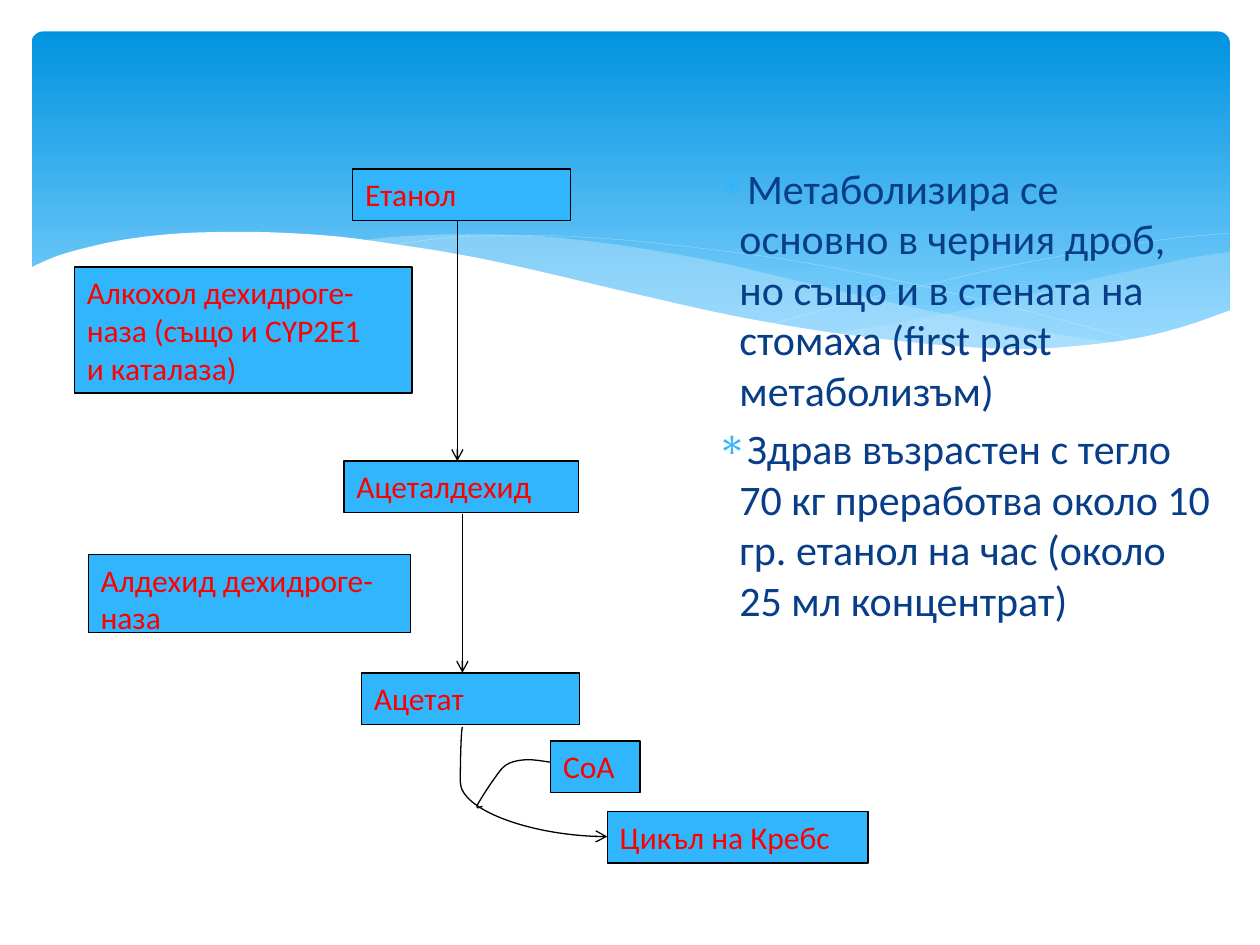
from lxml import etree
from pptx import Presentation
from pptx.dml.color import RGBColor
from pptx.enum.shapes import MSO_CONNECTOR, MSO_SHAPE
from pptx.enum.text import MSO_ANCHOR, PP_ALIGN
from pptx.oxml.ns import qn
from pptx.util import Inches, Pt

FONT = "Calibri"
BLUE, NAVY, RED, BLACK, WHITE, PALE = "31B6FD", "073E87", "FF0000", "000000", "FFFFFF", "C6E7FC"

BULLETS = [
    "Метаболизира се основно в черния дроб, но също и в стената на стомаха (first past метаболизъм)",
    "Здрав възрастен с тегло 70 кг преработва около 10 гр. етанол на час (около 25 мл концентрат)",
]

# Text, left, top, width, height
BOXES = [
    ("Етанол", 2.8, 1.34, 1.73, 0.41),
    ("Ацеталдехид", 2.73, 3.66, 1.86, 0.41),
    ("Алкохол дехидроге-\nназа (също и CYP2E1\nи каталаза)", 0.59, 2.12, 2.68, 1),
    ("Алдехид дехидроге-\nназа", 0.7, 4.4, 2.56, 0.62),
    ("Ацетат", 2.87, 5.34, 1.73, 0.41),
    ("CoA", 4.37, 5.88, 0.71, 0.41),
    ("Цикъл на Кребс", 4.82, 6.44, 2.07, 0.41),
]

# Arrow kind, x1, y1, x2, y2
ARROWS = [
    (MSO_CONNECTOR.STRAIGHT, 3.63, 1.75, 3.63, 3.66),
    (MSO_CONNECTOR.STRAIGHT, 3.67, 4.08, 3.67, 5.34),
    (MSO_CONNECTOR.CURVE, 3.67, 5.77, 4.82, 6.64),
]

COA_CURVE = [(4.37, 6.05), (4.18, 6.03), (4.02, 6.07), (3.91, 6.2), (3.8, 6.37),
             (3.79, 6.41), (3.83, 6.4)]

# Each wave is a list of edges; an edge is smoothed between its ends
RIGHT_WAVE = [
    [(9.76, 2), (9.48, 2.04), (9.06, 2.13), (8.61, 2.23), (7.79, 2.43), (7.29, 2.53), (6.61, 2.65)],
    [(6.61, 2.65), (7.05, 2.71), (7.57, 2.76), (8.03, 2.78), (8.54, 2.76), (8.97, 2.7),
     (9.35, 2.62), (9.76, 2.47)],
]
MIDDLE_WAVE = [
    [(8.93, 2.73), (8.37, 2.65), (7.75, 2.54), (7.06, 2.4), (6.29, 2.22), (5.69, 2.08),
     (5.14, 1.98), (4.64, 1.91), (4.2, 1.87), (3.61, 1.86), (3.13, 1.88), (2.86, 1.91)],
    [(2.86, 1.91), (3.42, 1.99), (4.04, 2.11), (4.91, 2.32), (5.66, 2.48), (6.34, 2.61),
     (6.95, 2.7), (7.48, 2.76), (8.07, 2.79), (8.48, 2.78), (8.93, 2.73)],
]
LONG_LINE = [
    [(3.09, 1.95), (3.43, 1.9), (3.87, 1.87), (4.33, 1.87), (4.89, 1.9), (5.56, 1.97),
     (6.36, 2.08), (7.27, 2.26), (8.31, 2.51), (9.07, 2.72)],
]
SHORT_LINE = [
    [(6.13, 2.57), (6.72, 2.41), (7.48, 2.23), (8.06, 2.1), (8.66, 1.99), (9.24, 1.9), (9.75, 1.85)],
]
FRONT_WAVE = [
    [(9.77, 2.46), (9.4, 2.59), (8.99, 2.69), (8.5, 2.75), (8.09, 2.77), (7.61, 2.75),
     (7.08, 2.7), (6.47, 2.62), (5.79, 2.5), (5.03, 2.33), (4.18, 2.13), (3.65, 2.02),
     (3.15, 1.94), (2.71, 1.88), (2.3, 1.85), (1.93, 1.84), (1.46, 1.85), (1.06, 1.89),
     (0.75, 1.95), (0.46, 2.03), (0.23, 2.13)],
    [(0.23, 3.29), (9.77, 3.29)],
]


def rgb(color):
    return RGBColor.from_string(color)


def smooth(pts, steps=5):
    """Catmull-Rom curve through the points."""
    if len(pts) < 3:
        return pts
    padded = [pts[0]] + pts + [pts[-1]]
    out = [pts[0]]
    for a, b, c, d in zip(padded, padded[1:], padded[2:], padded[3:]):
        for t in (k / steps for k in range(1, steps + 1)):
            out.append(tuple(
                0.5 * (2 * q + (r - p) * t + (2 * p - 5 * q + 4 * r - s) * t ** 2
                       + (3 * q - p - 3 * r + s) * t ** 3)
                for p, q, r, s in zip(a, b, c, d)))
    return out


def add_path(shapes, edges, fill=None, alpha=100, line=None, width=0.02):
    pts = [(Inches(x), Inches(y)) for edge in edges for x, y in smooth(edge)]
    builder = shapes.build_freeform(*pts[0], scale=1.0)
    builder.add_line_segments(pts[1:], close=fill is not None)
    s = builder.convert_to_shape()
    s.shadow.inherit = False
    if fill:
        s.fill.solid()
        s.fill.fore_color.rgb = rgb(fill)
        if alpha < 100:
            clr = s.fill._xPr.find(".//" + qn("a:srgbClr"))
            etree.SubElement(clr, qn("a:alpha")).set("val", str(alpha * 1000))
    else:
        s.fill.background()
    if line:
        s.line.color.rgb = rgb(line)
        s.line.width = Pt(width)
    else:
        s.line.fill.background()


def add_box(shapes, text, *place):
    s = shapes.add_shape(MSO_SHAPE.RECTANGLE, *map(Inches, place))
    s.shadow.inherit = False
    s.fill.solid()
    s.fill.fore_color.rgb = rgb(BLUE)
    s.line.color.rgb = rgb(BLACK)
    s.line.width = Pt(0.75)
    tf = s.text_frame
    tf.text = text
    tf.word_wrap = True
    tf.vertical_anchor = MSO_ANCHOR.TOP
    for p in tf.paragraphs:
        p.alignment = PP_ALIGN.LEFT
        set_font(p, 18, RED)


def set_font(p, size, color):
    for r in p.runs:
        r.font.name = FONT
        r.font.size = Pt(size)
        r.font.color.rgb = rgb(color)


def add_arrow(shapes, kind, *ends):
    s = shapes.add_connector(kind, *map(Inches, ends))
    s.line.color.rgb = rgb(BLACK)
    s.line.width = Pt(0.75)
    etree.SubElement(s.line._get_or_add_ln(), qn("a:tailEnd")).set("type", "arrow")
    sp_pr = s._element.spPr
    etree.SubElement(sp_pr, qn("a:effectLst"))
    if kind == MSO_CONNECTOR.CURVE:
        # Bend just left of the start point
        guides = sp_pr.find(".//" + qn("a:avLst"))
        if guides is None:
            guides = etree.SubElement(sp_pr.find(qn("a:prstGeom")), qn("a:avLst"))
        etree.SubElement(guides, qn("a:gd"), name="adj1", fmla="val -1500")


def add_bullets(shapes):
    tf = shapes.add_textbox(Inches(5.47), Inches(1.24), Inches(4.25), Inches(4.5)).text_frame
    tf.word_wrap = True
    tf.text = "\n".join(BULLETS)
    for i, p in enumerate(tf.paragraphs):
        # The bullet is wider than its indent, so the first line starts further in
        p_pr = p._p.get_or_add_pPr()
        p_pr.set("marL", str(Inches(0.3)))
        p_pr.set("indent", str(-Inches(0.18)))
        clr = etree.SubElement(p_pr, qn("a:buClr"))
        etree.SubElement(clr, qn("a:srgbClr")).set("val", BLUE)
        etree.SubElement(p_pr, qn("a:buChar")).set("char", "∗")
        if i:
            p.space_before = Pt(4.8)
        set_font(p, 24, NAVY)


prs = Presentation()
prs.slide_width, prs.slide_height = Inches(10), Inches(7.5)
shapes = prs.slides.add_slide(prs.slide_layouts[6]).shapes

# Gradient banner
banner = shapes.add_shape(MSO_SHAPE.ROUNDED_RECTANGLE, Inches(0.25), Inches(0.25),
                          Inches(9.51), Inches(2.7))
banner.adjustments[0] = 0.034
banner.shadow.inherit = False
banner.line.fill.background()
banner.fill.gradient()
banner.fill.gradient_angle = 270
for stop, (position, color) in zip(banner.fill.gradient_stops, [(0, "0293E0"), (0.9, "83D3FE")]):
    stop.position = position
    stop.color.rgb = rgb(color)

# Waves
add_path(shapes, RIGHT_WAVE, fill=PALE, alpha=29)
add_path(shapes, MIDDLE_WAVE, fill=PALE, alpha=40)
add_path(shapes, LONG_LINE, line=WHITE)
add_path(shapes, SHORT_LINE, line=WHITE)
add_path(shapes, FRONT_WAVE, fill=WHITE)

# Text and metabolic pathway
add_bullets(shapes)
for box in BOXES:
    add_box(shapes, *box)
for arrow in ARROWS:
    add_arrow(shapes, *arrow)
add_path(shapes, [COA_CURVE], line=BLACK, width=0.75)

prs.save("out.pptx")
